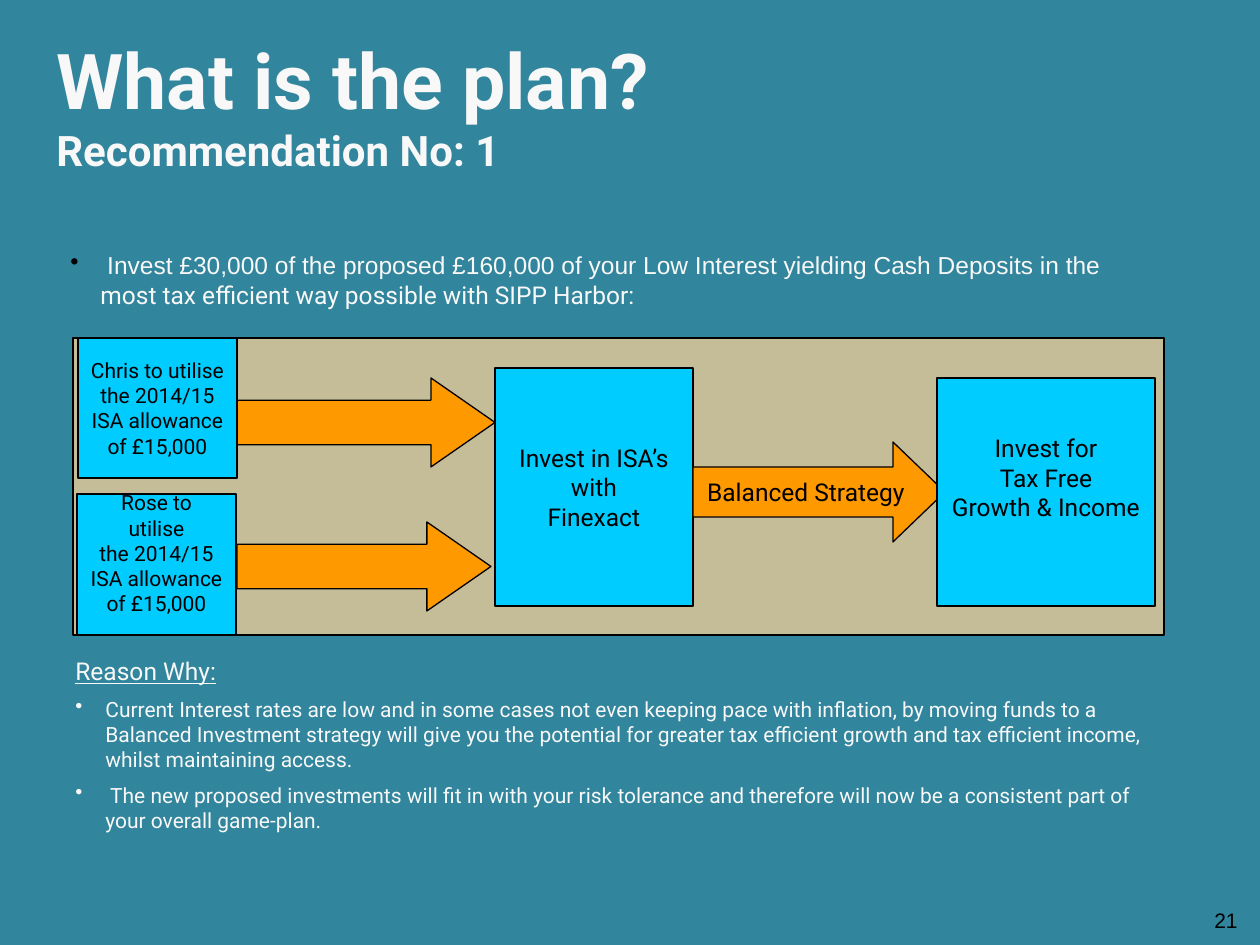
import pptx
import pptx.util
import pptx.dml.color
import pptx.enum.shapes
import pptx.enum.text
import lxml.etree

PX = 914400 // 126
THEME = {
    "back": "31859C", "panel": "C4BD97", "step": "00CCFF", "arrow": "FF9900",
    "ink": "000000", "light": "F8F8F8", "font": "Roboto", "plain": "Arial",
    "title": 44, "subtitle": 24, "body": 14, "small": 12, "line": 0.75,
}
KIND = pptx.enum.shapes.MSO_SHAPE
ALIGN = pptx.enum.text.PP_ALIGN
MIDDLE = pptx.enum.text.MSO_ANCHOR.MIDDLE


def color(name):
    return pptx.dml.color.RGBColor.from_string(THEME[name])


def write(frame, lines, size, ink, align=ALIGN.LEFT):
    """Fill a text frame with one paragraph per line and return the paragraphs."""
    frame.text = "\n".join(lines)
    for para in frame.paragraphs:
        para.alignment = align
        para.font.size = pptx.util.Pt(THEME[size])
        para.font.name = THEME["font"]
        para.font.color.rgb = color(ink)
    return frame.paragraphs


deck = pptx.Presentation()
deck.slide_width, deck.slide_height = 1260 * PX, 945 * PX
page = deck.slides.add_slide(deck.slide_layouts[6])
page.background.fill.solid()
page.background.fill.fore_color.rgb = color("back")

# Text blocks: left, top, width, height
frames = {}
for name, box in {
    "heading": (44, 26, 650, 158),
    "intro": (58, 244, 1091, 72),
    "reasons": (63, 650, 1101, 233),
    "number": (956, 895, 294, 50),
}.items():
    frames[name] = page.shapes.add_textbox(*(PX * v for v in box)).text_frame
    frames[name].word_wrap = True

title, subtitle = write(
    frames["heading"], ["What is the plan?", "Recommendation No: 1"], "title", "light")
subtitle.font.size = pptx.util.Pt(THEME["subtitle"])
title.font.bold = subtitle.font.bold = True

intro = write(frames["intro"], [""], "body", "light")[0]
for words, font in (
    (" Invest £30,000 of the proposed £160,000 of your Low Interest yielding "
     "Cash Deposits in the", "plain"),
    (" most tax efficient way possible with SIPP Harbor:", "font"),
):
    span = intro.add_run()
    span.text = words
    span.font.name = THEME[font]

reason, *points = write(frames["reasons"], [
    "Reason Why:",
    "Current Interest rates are low and in some cases not even keeping pace with "
    "inflation, by moving funds to a Balanced Investment strategy will give you the "
    "potential for greater tax efficient growth and tax efficient income, whilst "
    "maintaining access.",
    " The new proposed investments will fit in with your risk tolerance and therefore "
    "will now be a consistent part of your overall game-plan.",
], "small", "light")
reason.font.size = pptx.util.Pt(THEME["body"])
reason.font.underline = True
for para in points:
    para.space_before = pptx.util.Pt(6)

for para, ink in [(intro, "ink")] + [(point, "light") for point in points]:
    props = para._p.get_or_add_pPr()
    props.set("marL", str(30 * PX))
    props.set("indent", str(-30 * PX))
    namespace = props.nsmap["a"]
    bullet_color = lxml.etree.Element(f"{{{namespace}}}buClr")
    lxml.etree.SubElement(bullet_color, f"{{{namespace}}}srgbClr", val=THEME[ink])
    bullet = lxml.etree.Element(f"{{{namespace}}}buChar", char="•")
    place = props.index(props.find(f"{{{namespace}}}defRPr"))
    props[place:place] = [bullet_color, bullet]

number = write(frames["number"], ["21"], "small", "ink", ALIGN.RIGHT)[0]
number.font.name = THEME["plain"]
frames["number"].vertical_anchor = MIDDLE

# Flow: kind, fill, box, arrowhead, type size, lines, top and bottom inset
allowance = ["the 2014/15", "ISA allowance", "of £15,000"]
for kind, fill, box, head, size, lines, top, bottom in (
    (KIND.RECTANGLE, "panel", (73, 338, 1091, 297), None, "body", [], 6, 6),
    (KIND.RECTANGLE, "step", (495, 368, 198, 238), None, "body",
     ["Invest in ISA’s", "with", "Finexact"], 6, 6),
    (KIND.RIGHT_ARROW, "arrow", (693, 442, 252, 100), 0.52, "body",
     ["Balanced Strategy"], 6, 6),
    (KIND.RECTANGLE, "step", (937, 378, 218, 228), None, "body",
     ["Invest for", "Tax Free", "Growth & Income"], 6, 35),
    (KIND.RIGHT_ARROW, "arrow", (237, 378, 258, 89), 0.72, "body", [], 6, 6),
    (KIND.RECTANGLE, "step", (78, 338, 159, 140), None, "small",
     ["Chris to utilise"] + allowance, 6, 6),
    (KIND.RECTANGLE, "step", (77, 494, 159, 141), None, "small",
     ["Rose to", "utilise"] + allowance, 0, 23),
    (KIND.RIGHT_ARROW, "arrow", (237, 522, 254, 89), 0.72, "body", [], 6, 6),
):
    shape = page.shapes.add_shape(kind, *(PX * v for v in box))
    shape.shadow.inherit = False
    shape.fill.solid()
    shape.fill.fore_color.rgb = color(fill)
    shape.line.color.rgb = color("ink")
    shape.line.width = pptx.util.Pt(THEME["line"])
    if head:
        shape.adjustments[1] = head
    if lines:
        frame = shape.text_frame
        frame.word_wrap = False
        frame.vertical_anchor = MIDDLE
        frame.margin_top, frame.margin_bottom = top * PX, bottom * PX
        write(frame, lines, size, "ink", ALIGN.CENTER)

deck.save("out.pptx")
